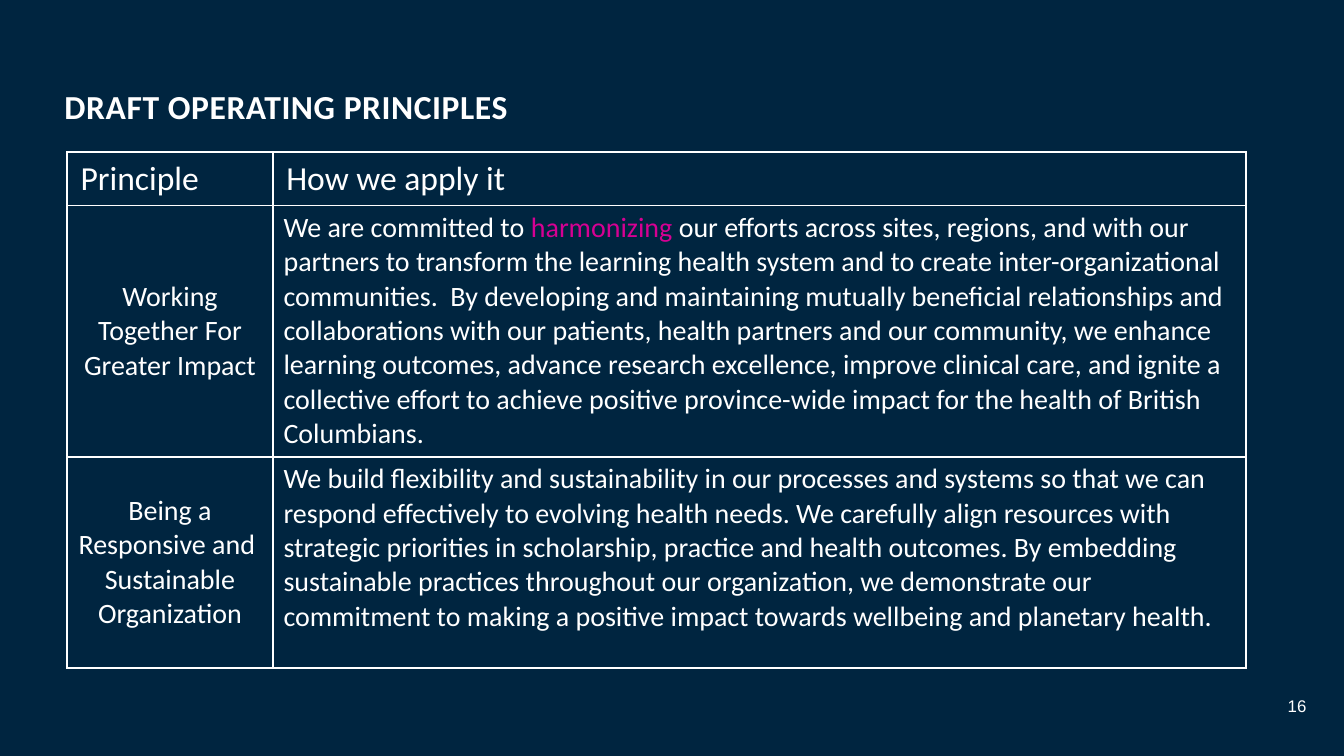
from lxml import etree
from pptx import Presentation
from pptx.dml.color import RGBColor
from pptx.enum.text import MSO_ANCHOR as Anchor, PP_ALIGN as Align
from pptx.oxml.ns import qn
from pptx.util import Inches, Pt

NAVY = RGBColor(0x00, 0x25, 0x40)
WHITE = RGBColor(0xFF, 0xFF, 0xFF)
MAGENTA = RGBColor(0xD6, 0x00, 0x93)

HEADERS = ["Principle", "How we apply it"]
# Each principle: its name and the runs that explain it
PRINCIPLES = [
    ("Working Together For Greater Impact", [
        ("We are committed to ", WHITE),
        ("harmonizing ", MAGENTA),
        ("our efforts across sites, regions, and with our partners to transform "
         "the learning health system and to create inter-organizational "
         "communities.  By developing and maintaining mutually beneficial "
         "relationships and collaborations with our patients, health partners "
         "and our community, we enhance learning outcomes, advance research "
         "excellence, improve clinical care, and ignite a collective effort to "
         "achieve positive province-wide impact for the health of British "
         "Columbians.", WHITE),
    ]),
    ("Being a Responsive and  Sustainable Organization", [
        ("We build flexibility and sustainability in our processes and systems "
         "so that we can respond effectively to evolving health needs. We "
         "carefully align resources with strategic priorities in scholarship, "
         "practice and health outcomes. By embedding sustainable practices "
         "throughout our organization, we demonstrate our commitment to making "
         "a positive impact towards wellbeing and planetary health.", WHITE),
    ]),
]


class SlideBuilder:
    """Holds the style and the current slide."""

    font = "Calibri"
    heading_size = 18
    body_size = 15
    border_width = 1

    def __init__(self, slide):
        self.slide = slide
        slide.background.fill.solid()
        slide.background.fill.fore_color.rgb = NAVY

    def style_run(self, run, size, color=WHITE, font=None, bold=False):
        run.font.name = font or self.font
        run.font.size = Pt(size)
        run.font.bold = bold
        run.font.color.rgb = color

    def text(self, left, top, width, height, text, size, font=None, bold=False,
             align=Align.LEFT, anchor=Anchor.TOP):
        box = self.slide.shapes.add_textbox(
            Inches(left), Inches(top), Inches(width), Inches(height))
        frame = box.text_frame
        frame.margin_left = frame.margin_right = 0
        frame.margin_top = frame.margin_bottom = 0
        frame.word_wrap = True
        frame.vertical_anchor = anchor
        frame.text = text
        paragraph = frame.paragraphs[0]
        paragraph.alignment = align
        self.style_run(paragraph.runs[0], size, font=font, bold=bold)
        return paragraph

    def table(self, left, top, columns, rows):
        frame = self.slide.shapes.add_table(
            len(rows), len(columns), Inches(left), Inches(top),
            Inches(sum(columns)), Inches(sum(rows)))
        table = frame.table
        table.first_row = table.horz_banding = False
        for column, width in zip(table.columns, columns):
            column.width = Inches(width)
        for row, height in zip(table.rows, rows):
            row.height = Inches(height)
        return table

    def cell(self, cell, runs, size, margins, align=Align.LEFT, anchor=Anchor.TOP):
        side, end = margins
        cell.margin_left = cell.margin_right = Inches(side)
        cell.margin_top = cell.margin_bottom = Inches(end)
        cell.vertical_anchor = anchor
        self.borders(cell)
        cell.fill.background()
        paragraph = cell.text_frame.paragraphs[0]
        paragraph.alignment = align
        for text, color in runs:
            run = paragraph.add_run()
            run.text = text
            self.style_run(run, size, color)

    def borders(self, cell):
        properties = cell._tc.get_or_add_tcPr()
        for edge in ("a:lnL", "a:lnR", "a:lnT", "a:lnB"):
            line = etree.SubElement(properties, qn(edge), w=str(Pt(self.border_width)))
            fill = etree.SubElement(line, qn("a:solidFill"))
            etree.SubElement(fill, qn("a:srgbClr"), val=str(WHITE))


def main():
    # 16:9 slide
    presentation = Presentation()
    presentation.slide_width = Inches(10)
    presentation.slide_height = Inches(10) * 9 // 16
    builder = SlideBuilder(presentation.slides.add_slide(presentation.slide_layouts[6]))

    # Page number
    builder.text(9.39, 5.18, 0.33, 0.21, "16", 9, font="Arial", align=Align.RIGHT)

    # Principles table
    table = builder.table(0.5, 1.13, [1.53, 7.24], [0.4, 1.87, 1.57])
    for column, header in enumerate(HEADERS):
        builder.cell(table.cell(0, column), [(header, WHITE)],
                     builder.heading_size, (0.1, 0.05))
    for row, (name, runs) in enumerate(PRINCIPLES, start=1):
        builder.cell(table.cell(row, 0), [(name, WHITE)], builder.body_size,
                     (0.08, 0.04), Align.CENTER, Anchor.MIDDLE)
        builder.cell(table.cell(row, 1), runs, builder.body_size, (0.08, 0.04))

    # Title
    title = builder.text(0.48, 0.45, 8.77, 0.68, "DRAFT OPERATING PRINCIPLES",
                         builder.heading_size, bold=True, anchor=Anchor.MIDDLE)
    title.line_spacing = Pt(21)
    title.runs[0].font._element.set("spc", "30")

    presentation.save("out.pptx")


if __name__ == "__main__":
    main()
